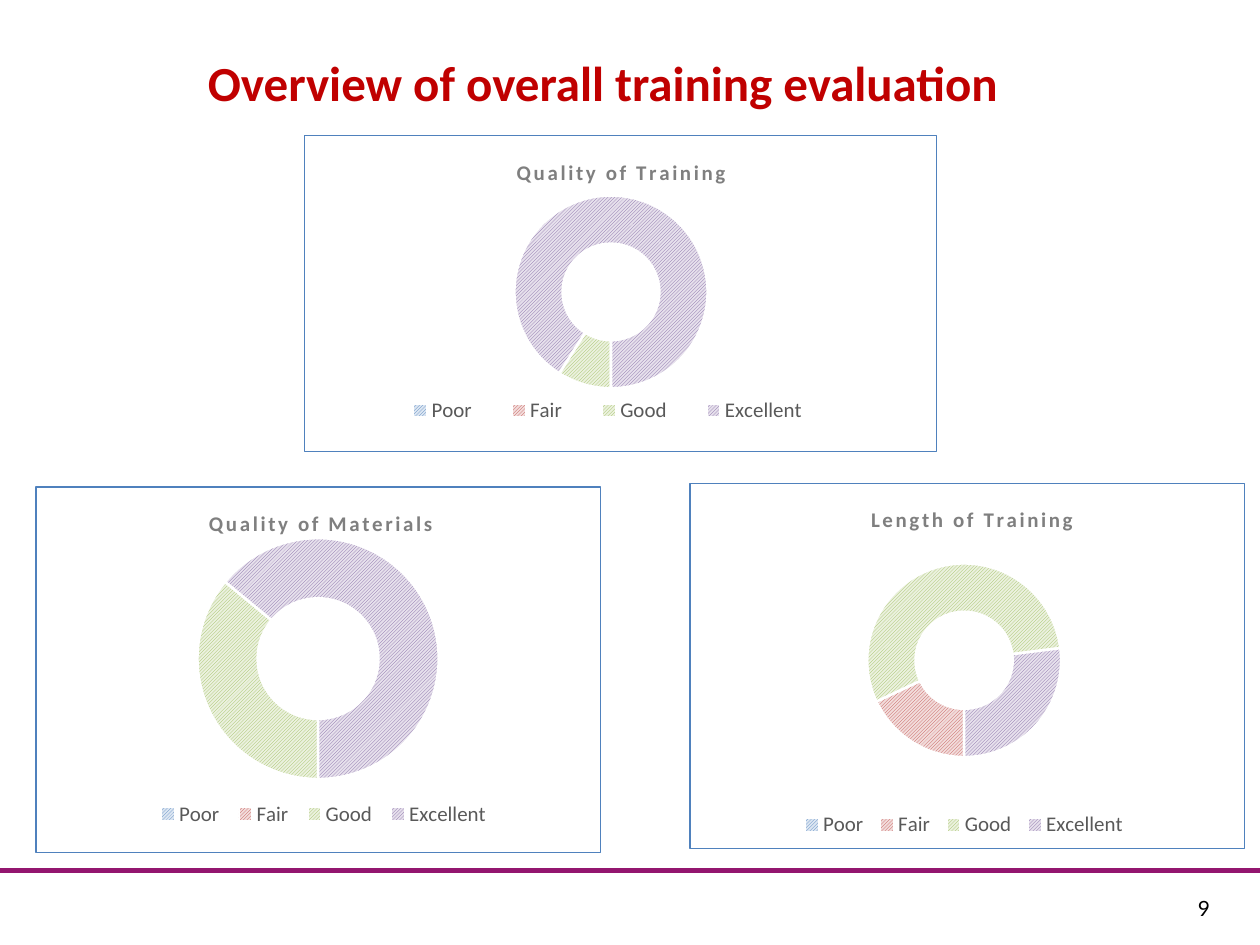
import pptx
import pptx.chart.data
import pptx.dml.color
import pptx.enum.chart
import pptx.enum.dml
import pptx.enum.shapes
import pptx.enum.text
import pptx.oxml
import pptx.oxml.ns
import pptx.util

RGBColor = pptx.dml.color.RGBColor
Inches = pptx.util.Inches
Pt = pptx.util.Pt

RED = RGBColor(0xC0, 0x00, 0x00)
PURPLE = RGBColor(0x93, 0x16, 0x6F)
BLACK = RGBColor(0, 0, 0)
WHITE = RGBColor(0xFF, 0xFF, 0xFF)
GRAY = RGBColor(0x7F, 0x7F, 0x7F)
DARK_GRAY = RGBColor(0x59, 0x59, 0x59)
BORDER = RGBColor(0x4F, 0x81, 0xBD)

HEADING = "Overview of overall training evaluation"
PAGE_NUMBER = "9"
RATINGS = [
    ("Poor", RGBColor(0x4F, 0x81, 0xBD), RGBColor(0xDC, 0xE6, 0xF2)),
    ("Fair", RGBColor(0xC0, 0x50, 0x4D), RGBColor(0xF2, 0xDC, 0xDB)),
    ("Good", RGBColor(0x9B, 0xBB, 0x59), RGBColor(0xEB, 0xF1, 0xDE)),
    ("Excellent", RGBColor(0x80, 0x64, 0xA2), RGBColor(0xE6, 0xE0, 0xEC)),
]
CHARTS = [
    {"title": "Quality of Training", "values": (0, 0, 9, 91),
     "frame": (2.41, 1.07, 5.03, 2.52), "title_at": (0.33, 0.06),
     "plot": (0.3, 0.19, 0.37, 0.61), "legend": (0.12, 0.82, 0.72, 0.1)},
    {"title": "Quality of Materials", "values": (0, 0, 36, 64),
     "frame": (0.28, 3.86, 4.49, 2.91), "title_at": (0.3, 0.05),
     "plot": (0.28, 0.14, 0.44, 0.66), "legend": (0.2, 0.85, 0.62, 0.09)},
    {"title": "Length of Training", "values": (0, 18, 55, 27),
     "frame": (5.47, 3.83, 4.41, 2.91), "title_at": (0.32, 0.05),
     "plot": (0.32, 0.17, 0.35, 0.63), "legend": (0.19, 0.89, 0.61, 0.09)},
]
CHART_NS = pptx.oxml.ns.nsdecls("c", "a")


def add_text(frame, text, font_name, size, color, bold=False):
    frame.margin_left = frame.margin_right = Inches(0.1)
    frame.margin_top = frame.margin_bottom = Inches(0.05)
    span = frame.paragraphs[0].add_run()
    span.text = text
    span.font.name = font_name
    span.font.size = Pt(size)
    span.font.bold = bold
    span.font.color.rgb = color


def make_layout(shares, inner=False):
    names = ("x", "y", "w", "h")[:len(shares)]
    target = '<c:layoutTarget val="inner"/>' if inner else ""
    modes = "".join(f'<c:{name}Mode val="edge"/>' for name in names[:2])
    sizes = "".join(f'<c:{name} val="{share}"/>' for name, share in zip(names, shares))
    return pptx.oxml.parse_xml(
        f"<c:layout {CHART_NS}><c:manualLayout>{target}{modes}{sizes}"
        "</c:manualLayout></c:layout>")


def add_doughnut(page, item):
    data = pptx.chart.data.CategoryChartData()
    data.categories = [name for name, _, _ in RATINGS]
    data.add_series("Series 1", item["values"])
    chart = page.shapes.add_chart(
        pptx.enum.chart.XL_CHART_TYPE.DOUGHNUT,
        *map(Inches, item["frame"]), data).chart
    chart.font.name = "Calibri"
    chart.font.size = Pt(10)
    chart.font.color.rgb = BLACK

    plot = chart.plots[0]
    plot.vary_by_categories = True
    for index, (_, foreground, background) in enumerate(RATINGS):
        slice_format = plot.series[0].points[index].format
        slice_format.fill.patterned()
        slice_format.fill.pattern = pptx.enum.dml.MSO_PATTERN.LIGHT_UPWARD_DIAGONAL
        slice_format.fill.fore_color.rgb = foreground
        slice_format.fill.back_color.rgb = background
        slice_format.line.color.rgb = WHITE
        slice_format.line.width = Pt(1.5)

    chart.has_title = True
    span = chart.chart_title.text_frame.paragraphs[0].add_run()
    span.text = item["title"]
    span.font.name = "Calibri"
    span.font.size = Pt(12)
    span.font.bold = True
    span.font.color.rgb = GRAY
    span.font._element.set("spc", "150")

    chart.has_legend = True
    legend = chart.legend
    legend.position = pptx.enum.chart.XL_LEGEND_POSITION.TOP
    legend.include_in_layout = False
    legend.font.name = "Calibri"
    legend.font.size = Pt(12)
    legend.font.color.rgb = DARK_GRAY

    root = chart._chartSpace
    for layout in root.xpath(".//c:layout"):
        layout.getparent().remove(layout)
    root.xpath(".//c:title/c:tx")[0].addnext(make_layout(item["title_at"]))
    root.xpath(".//c:legendPos")[0].addnext(make_layout(item["legend"]))
    root.xpath(".//c:plotArea")[0].insert(0, make_layout(item["plot"], True))
    root.xpath(".//c:firstSliceAng")[0].set("val", "180")
    root.xpath(".//c:holeSize")[0].set("val", "50")
    root.xpath("./c:chart")[0].addnext(pptx.oxml.parse_xml(
        f'<c:spPr {CHART_NS}><a:noFill/><a:ln w="{Pt(0.75)}"><a:solidFill>'
        f'<a:srgbClr val="{BORDER}"/></a:solidFill></a:ln></c:spPr>'))


def main():
    deck = pptx.Presentation()
    deck.slide_width = Inches(10)
    deck.slide_height = Inches(7.5)
    page = deck.slides.add_slide(deck.slide_layouts[5])

    rule = page.shapes.add_connector(
        pptx.enum.shapes.MSO_CONNECTOR.STRAIGHT,
        0, Inches(6.91), deck.slide_width, Inches(6.91))
    rule.line.color.rgb = PURPLE
    rule.line.width = Pt(3)
    rule._element.spPr.append(pptx.oxml.parse_xml(f"<a:effectLst {CHART_NS}/>"))

    number = page.shapes.add_textbox(*map(Inches, (9.41, 7.06, 0.47, 0.3)))
    number.text_frame.word_wrap = True
    add_text(number.text_frame, PAGE_NUMBER, "Lato", 12, BLACK)

    for item in CHARTS:
        add_doughnut(page, item)

    title = page.shapes.title
    title.left, title.top, title.width, title.height = map(
        Inches, (1.55, 0.37, 6.76, 0.57))
    title.text_frame.word_wrap = False
    title.text_frame.vertical_anchor = pptx.enum.text.MSO_ANCHOR.TOP
    title.text_frame.paragraphs[0].alignment = pptx.enum.text.PP_ALIGN.LEFT
    add_text(title.text_frame, HEADING, "Calibri", 28, RED, True)

    deck.save("out.pptx")


if __name__ == "__main__":
    main()
